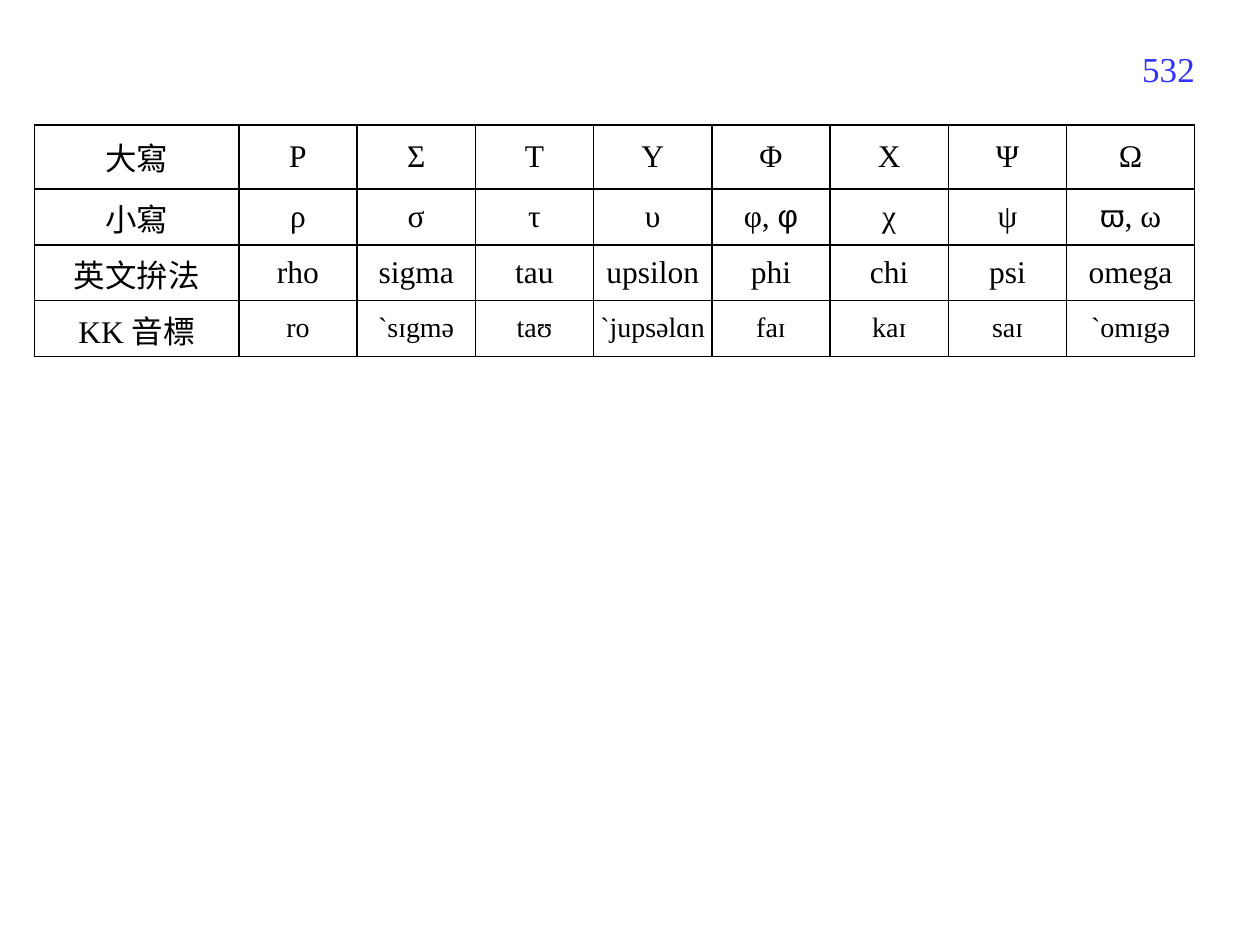
"""Build a slide with a table of the Greek letters from rho to omega."""
from lxml import etree
from pptx import Presentation
from pptx import util as u
from pptx.dml.color import RGBColor
from pptx.enum import text
from pptx.oxml import ns

BLACK = RGBColor(0x00, 0x00, 0x00)
BLUE = RGBColor(0x33, 0x33, 0xFF)
SERIF, SANS = "Times New Roman", "Arial"

PAGE_NUMBER = "532"
LETTER_ROWS = [
    ["大寫", "Ρ", "Σ", "Τ", "Υ", "Φ", "Χ", "Ψ", "Ω"],
    ["小寫", "ρ", "σ", "τ", "υ", [("φ, ", SERIF), ("φ", SANS)], "χ", "ψ",
     [("ϖ", SANS), (", ω", SERIF)]],
    ["英文拚法", "rho", "sigma", "tau", "upsilon", "phi", "chi", "psi", "omega"],
    ["KK 音標", "ro", "ˋsɪgmə", "taʊ", "ˋjupsəlɑn", "faɪ", "kaɪ", "saɪ", "ˋomɪgə"],
]
PHONETIC_ROW = len(LETTER_ROWS) - 1
COLUMN_WIDTHS = [116.9] + [67.6] * 7 + [73.1]
ROW_HEIGHTS = [36.6] + [31.9] * 3
TABLE_LEFT, TABLE_TOP = 19.6, 71.4


def add_run(paragraph, content, font_name, size, color):
    run = paragraph.add_run()
    run.text = content
    run.font.name = font_name
    run.font.size = u.Pt(size)
    run.font.color.rgb = color


def add_borders(cell):
    properties = cell._tc.get_or_add_tcPr()
    for position, side in enumerate(("lnL", "lnR", "lnT", "lnB")):
        line = etree.Element(ns.qn(f"a:{side}"), w=str(u.Pt(1)))
        fill = etree.SubElement(line, ns.qn("a:solidFill"))
        etree.SubElement(fill, ns.qn("a:srgbClr"), val=str(BLACK))
        properties.insert(position, line)


def fill_cell(cell, content, size, side_margin):
    cell.fill.background()
    cell.vertical_anchor = text.MSO_ANCHOR.MIDDLE
    cell.margin_left = cell.margin_right = u.Pt(side_margin)
    cell.margin_top = cell.margin_bottom = u.Pt(3.6)
    paragraph = cell.text_frame.paragraphs[0]
    paragraph.alignment = text.PP_ALIGN.CENTER
    runs = [(content, SERIF)] if isinstance(content, str) else content
    for words, font_name in runs:
        add_run(paragraph, words, font_name, size, BLACK)
    add_borders(cell)


def add_page_number(slide):
    shape = slide.shapes.add_textbox(u.Pt(626.4), u.Pt(20.2), u.Pt(63.4), u.Pt(37.4))
    frame = shape.text_frame
    frame.word_wrap = True
    frame.vertical_anchor = text.MSO_ANCHOR.MIDDLE
    paragraph = frame.paragraphs[0]
    paragraph.alignment = text.PP_ALIGN.RIGHT
    add_run(paragraph, PAGE_NUMBER, SERIF, 20, BLUE)


def add_letter_table(slide):
    shape = slide.shapes.add_table(
        len(ROW_HEIGHTS), len(COLUMN_WIDTHS), u.Pt(TABLE_LEFT), u.Pt(TABLE_TOP),
        u.Pt(sum(COLUMN_WIDTHS)), u.Pt(sum(ROW_HEIGHTS)))
    table = shape.table
    table.first_row = table.horz_banding = False
    for column, width in zip(table.columns, COLUMN_WIDTHS):
        column.width = u.Pt(width)
    for row, height in zip(table.rows, ROW_HEIGHTS):
        row.height = u.Pt(height)
    for row_index, contents in enumerate(LETTER_ROWS):
        for column_index, content in enumerate(contents):
            is_label = column_index == 0
            size = 16 if row_index == PHONETIC_ROW and not is_label else 18
            fill_cell(table.cell(row_index, column_index), content, size,
                      7.2 if is_label else 1.4)


def main():
    presentation = Presentation()
    presentation.slide_width, presentation.slide_height = u.Pt(720), u.Pt(540)
    slide = presentation.slides.add_slide(presentation.slide_layouts[6])
    add_page_number(slide)
    add_letter_table(slide)
    presentation.save("out.pptx")


if __name__ == "__main__":
    main()
